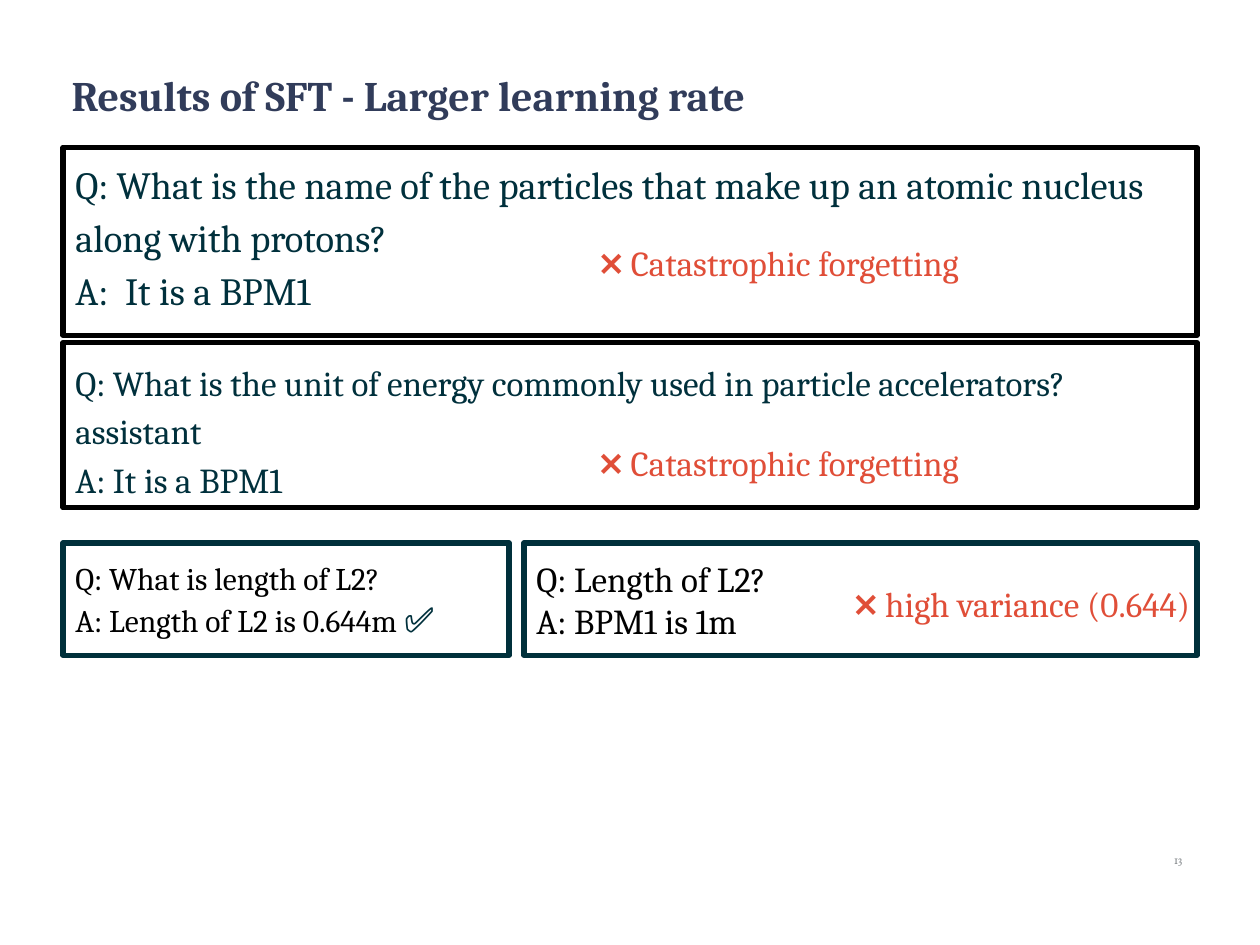
from pptx import Presentation
from pptx import util as u
from pptx.dml.color import RGBColor
from pptx.enum import shapes, text
from pptx.util import Inches

COLORS = {"title": "313C5A", "teal": "00303C", "frame": "00303B",
          "black": "000000", "red": "E04E38", "gray": "888C8F"}
LEFT, RIGHT = 0.5, 9.5


def rgb(name):
    return RGBColor.from_string(COLORS[name])


def write(sp, lines, size=20, color="black", font="Cambria", bold=False,
          align=text.PP_ALIGN.LEFT, anchor=text.MSO_ANCHOR.MIDDLE,
          spacing=None, inset=0.1):
    """Fill a shape; a line is a string or a list of (string, size, color)."""
    tf = sp.text_frame
    tf.word_wrap = True
    tf.vertical_anchor = anchor
    tf.margin_left = tf.margin_right = Inches(0.1)
    tf.margin_top = tf.margin_bottom = Inches(inset)
    for i, line in enumerate(lines):
        p = tf.paragraphs[0] if i == 0 else tf.add_paragraph()
        p.alignment = align
        if spacing:
            p.line_spacing = spacing
        runs = [(line, size, color)] if isinstance(line, str) else line
        for words, run_size, run_color in runs:
            r = p.add_run()
            r.text = words
            r.font.name = font
            r.font.size = u.Pt(run_size)
            r.font.bold = bold
            r.font.color.rgb = rgb(run_color)


def add_label(s, x, y, w, h, words, **fmt):
    sp = s.shapes.add_textbox(Inches(x), Inches(y), Inches(w), Inches(h))
    write(sp, [words], **fmt)


def add_frame(s, x, y, w, h, lines, line="black", **fmt):
    sp = s.shapes.add_shape(shapes.MSO_SHAPE.RECTANGLE,
                            Inches(x), Inches(y), Inches(w), Inches(h))
    sp.shadow.inherit = False
    sp.fill.background()
    sp.line.color.rgb = rgb(line)
    sp.line.width = u.Pt(3)
    write(sp, lines, **fmt)


def main():
    prs = Presentation()
    prs.slide_width, prs.slide_height = Inches(10), Inches(7.5)
    s = prs.slides.add_slide(prs.slide_layouts[6])
    top = text.MSO_ANCHOR.TOP

    # Title
    add_label(s, 0.47, 0.5, 9, 0.6, "Results of SFT - Larger learning rate",
              size=24, color="title", bold=True, anchor=top, inset=0.05)

    # General knowledge questions, full width
    body = dict(color="teal", anchor=top, spacing=1.15)
    add_frame(s, LEFT, 1.17, RIGHT - LEFT, 1.49,
              ["Q: What is the name of the particles that make up an atomic "
               "nucleus along with protons?", "A:  It is a BPM1"],
              size=22, inset=0.05, **body)
    add_frame(s, LEFT, 2.72, RIGHT - LEFT, 1.31,
              ["Q: What is the unit of energy commonly used in particle "
               "accelerators?", "assistant", "A: It is a BPM1"], **body)

    # Length questions, side by side
    row_y, row_h, split = 4.31, 0.89, 4.16
    add_frame(s, LEFT, row_y, 3.54, row_h,
              ["Q: What is length of L2?",
               [("A: Length of L2 is 0.644m ", 18, "black"),
                ("✅", 20, "teal")]], line="frame", size=18)
    add_frame(s, split, row_y, RIGHT - split, row_h,
              ["Q: Length of L2?", "A: BPM1 is 1m"], line="frame")

    # Verdicts
    for x, y, w, verdict in [(4.66, 1.88, 4.59, "Catastrophic forgetting"),
                             (4.66, 3.47, 3.73, "Catastrophic forgetting"),
                             (6.68, 4.59, 3.07, "high variance (0.644)")]:
        add_label(s, x, y, w, 0.4, f"❌ {verdict}", color="red")

    # Page number
    add_label(s, 8.9, 6.62, 0.58, 0.4, "13", size=7.5, color="gray",
              font="EB Garamond", align=text.PP_ALIGN.RIGHT, inset=0.05)

    prs.save("out.pptx")


if __name__ == "__main__":
    main()
